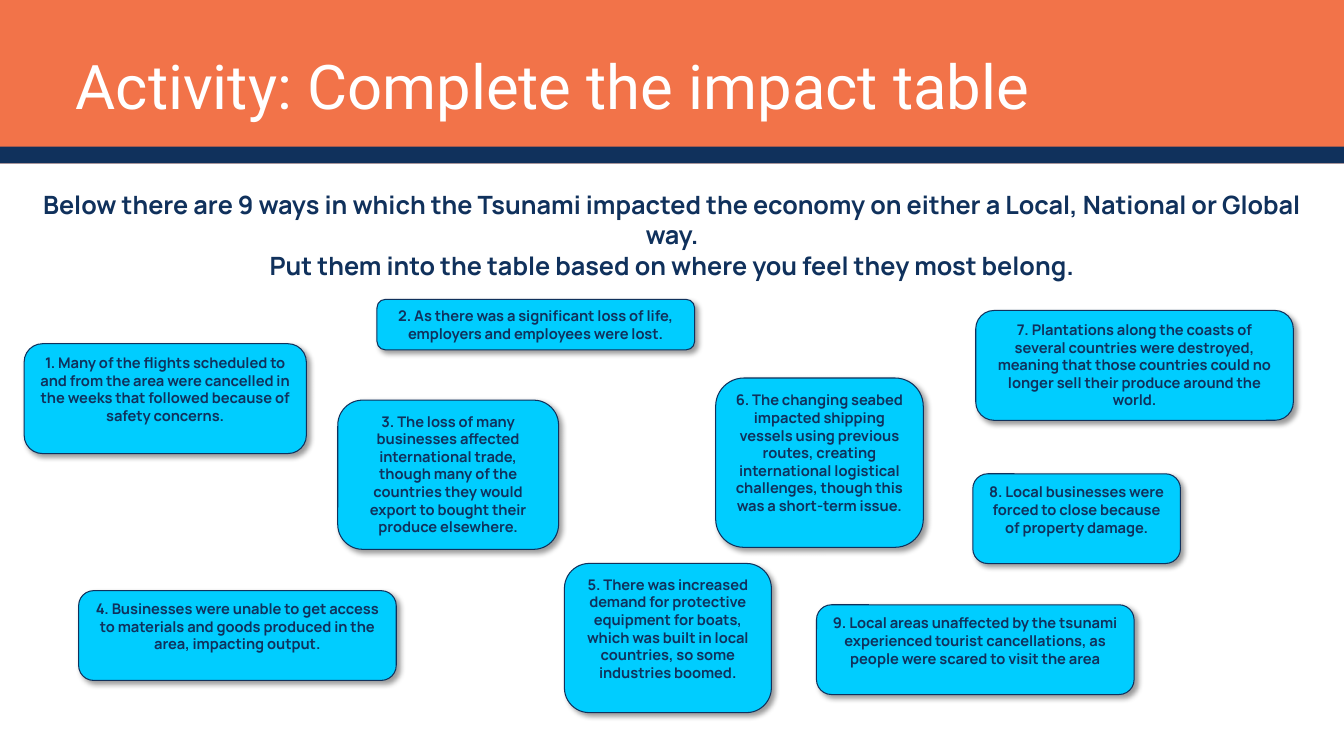
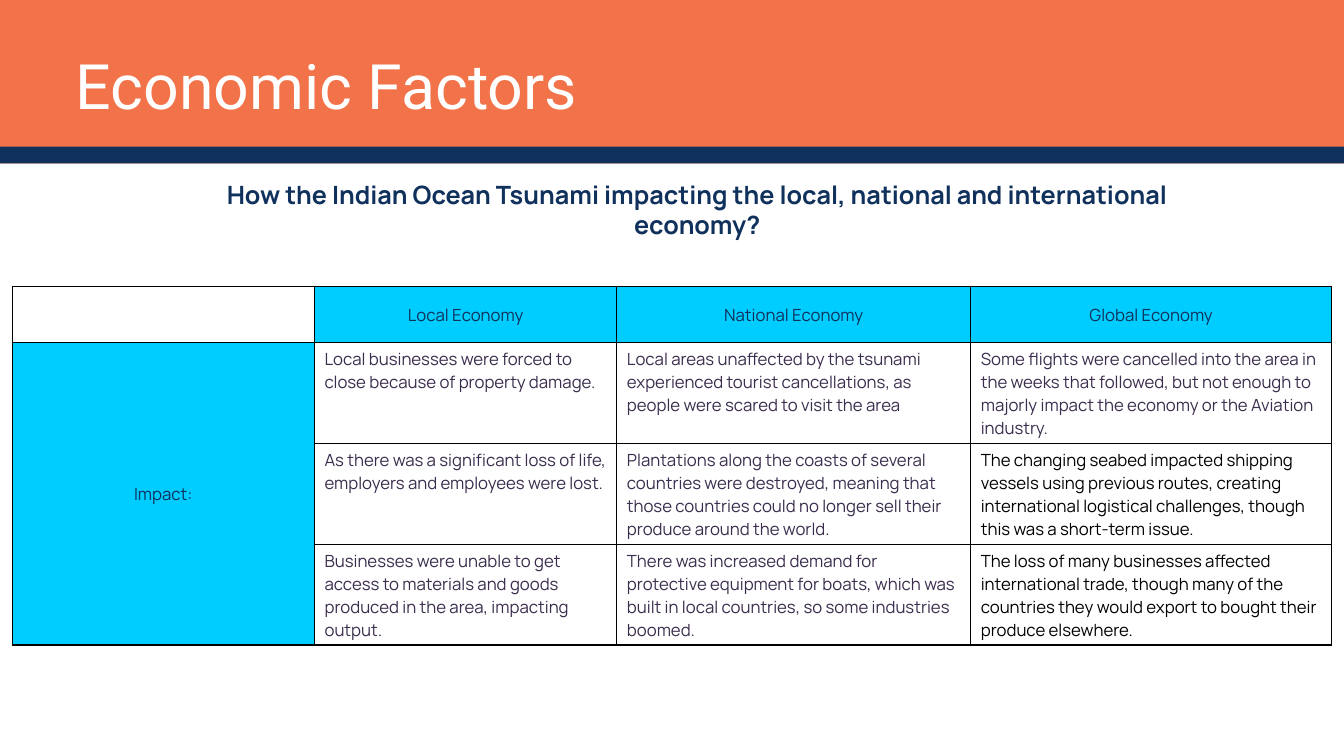
import lxml.etree
import pptx
import pptx.dml.color
import pptx.enum.shapes
import pptx.enum.text
import pptx.oxml.ns
import pptx.util

WIDTH = pptx.util.Inches(13.33)
HEIGHT = pptx.util.Inches(7.5)

ORANGE = "F27349"
NAVY = "10315C"
CYAN = "00CDFF"
PURPLE = "3B2D4D"
WHITE = "FFFFFF"
BLACK = "000000"

CENTER = pptx.enum.text.PP_ALIGN.CENTER
LEFT = pptx.enum.text.PP_ALIGN.LEFT
SHAPES = pptx.enum.shapes.MSO_SHAPE

TITLE = {"name": "Roboto", "size": pptx.util.Pt(44), "bold": False}
HEADING = {"name": "Manrope", "size": pptx.util.Pt(18), "bold": True}
CARD = {"name": "Manrope", "size": pptx.util.Pt(10.5), "bold": True}
CELL = {"name": "Manrope", "size": pptx.util.Pt(12), "bold": False}
NO_MARGINS = {f"margin_{side}": 0 for side in ("left", "top", "right", "bottom")}

FLIGHTS = (
    "Many of the flights scheduled to and from the area were cancelled "
    "in the weeks that followed because of safety concerns."
)
FEW_FLIGHTS = (
    "Some flights were cancelled into the area in the weeks that followed, "
    "but not enough to majorly impact the economy or the Aviation industry."
)
LOST_LIVES = (
    "As there was a significant loss of life, employers and employees were lost."
)
TRADE = (
    "The loss of many businesses affected international trade, though many of the "
    "countries they would export to bought their produce elsewhere."
)
MATERIALS = (
    "Businesses were unable to get access to materials and goods produced in the "
    "area, impacting output."
)
BOATS = (
    "There was increased demand for protective equipment for boats, which was built "
    "in local countries, so some industries boomed."
)
SEABED = (
    "The changing seabed impacted shipping vessels using previous routes, creating "
    "international logistical challenges, though this was a short-term issue."
)
PLANTATIONS = (
    "Plantations along the coasts of several countries were destroyed, meaning that "
    "those countries could no longer sell their produce around the world."
)
CLOSURES = "Local businesses were forced to close because of property damage."
TOURISTS = (
    "Local areas unaffected by the tsunami experienced tourist cancellations, as "
    "people were scared to visit the area"
)

CARDS = [
    (FLIGHTS, (1.8, 45.47, 21, 14.53)),
    (LOST_LIVES, (28.05, 39.6, 23.63, 6.67)),
    (TRADE, (25.13, 52.93, 16.43, 19.73)),
    (MATERIALS, (5.85, 78.13, 23.63, 11.87)),
    (BOATS, (42, 74.53, 15.4, 19.73)),
    (SEABED, (53.25, 50, 15.45, 22.4)),
    (PLANTATIONS, (72.6, 41.07, 23.63, 14.53)),
    (CLOSURES, (72.38, 62.67, 15.45, 11.87)),
    (TOURISTS, (60.75, 80, 23.63, 11.87)),
]

TABLE_COLUMNS = [22.5, 22.5, 26.33, 26.85]
TABLE_ROWS = [7.47, 13.33, 13.33, 13.33]
TABLE_TEXT = [
    ["", "Local Economy", "National Economy", "Global Economy"],
    ["Impact:", CLOSURES, TOURISTS, FEW_FLIGHTS],
    ["", LOST_LIVES, PLANTATIONS, SEABED],
    ["", MATERIALS, BOATS, TRADE],
]


def color(value):
    return pptx.dml.color.RGBColor.from_string(value)


def across(percent):
    return round(WIDTH * percent / 100)


def down(percent):
    return round(HEIGHT * percent / 100)


def place(box):
    left, top, width, height = box
    return across(left), down(top), across(width), down(height)


def apply_format(target, values):
    for name, value in values.items():
        setattr(target, name, value)


def write(frame, lines, font_format, font_color, paragraph_format):
    for index, line in enumerate(lines):
        paragraph = frame.add_paragraph() if index else frame.paragraphs[0]
        apply_format(paragraph, paragraph_format)
        run = paragraph.add_run()
        run.text = line
        apply_format(run.font, font_format)
        run.font.color.rgb = color(font_color)


def fit(frame):
    frame.word_wrap = True
    frame.auto_size = pptx.enum.text.MSO_AUTO_SIZE.SHAPE_TO_FIT_TEXT


def add_text(slide, box, lines, font_format, font_color, paragraph_format, margins):
    frame = slide.shapes.add_textbox(*place(box)).text_frame
    fit(frame)
    apply_format(frame, margins)
    write(frame, lines, font_format, font_color, paragraph_format)


def add_block(slide, kind, box, fill):
    shape = slide.shapes.add_shape(kind, *place(box))
    shape.fill.solid()
    shape.fill.fore_color.rgb = color(fill)
    shape.line.fill.background()
    shape.shadow.inherit = False
    return shape


def add_shadow(shape):
    qn = pptx.oxml.ns.qn
    effects = shape._element.spPr.find(qn("a:effectLst"))
    shadow = lxml.etree.SubElement(
        effects,
        qn("a:outerShdw"),
        blurRad=str(pptx.util.Pt(4)),
        dist=str(pptx.util.Pt(3)),
        dir=str(45 * 60000),
        algn="tl",
        rotWithShape="0",
    )
    tint = lxml.etree.SubElement(shadow, qn("a:srgbClr"), val=BLACK)
    lxml.etree.SubElement(tint, qn("a:alpha"), val="40000")


def add_card(slide, text, box):
    card = add_block(slide, SHAPES.ROUNDED_RECTANGLE, box, CYAN)
    card.line.color.rgb = color(NAVY)
    card.line.width = pptx.util.Pt(0.75)
    add_shadow(card)
    fit(card.text_frame)
    card.text_frame.vertical_anchor = pptx.enum.text.MSO_ANCHOR.TOP
    write(card.text_frame, [text], CARD, NAVY, {"alignment": CENTER})


def add_borders(cell):
    qn = pptx.oxml.ns.qn
    properties = cell._tc.get_or_add_tcPr()
    for side in ("a:lnL", "a:lnR", "a:lnT", "a:lnB"):
        line = lxml.etree.SubElement(properties, qn(side), w=str(pptx.util.Pt(1)))
        fill = lxml.etree.SubElement(line, qn("a:solidFill"))
        lxml.etree.SubElement(fill, qn("a:srgbClr"), val=BLACK)


def style_cell(cell, row, column, text):
    is_label = (row == 0) != (column == 0)
    add_borders(cell)
    if is_label:
        cell.fill.solid()
        cell.fill.fore_color.rgb = color(CYAN)
        cell.vertical_anchor = pptx.enum.text.MSO_ANCHOR.MIDDLE
        font_color = NAVY
    else:
        cell.fill.background()
        font_color = BLACK if column == 3 and row > 1 else PURPLE
    if text:
        alignment = CENTER if is_label else LEFT
        write(cell.text_frame, [text], CELL, font_color, {"alignment": alignment})


def add_impact_table(slide):
    box = (0.9, 37.87, sum(TABLE_COLUMNS), sum(TABLE_ROWS))
    table = slide.shapes.add_table(
        len(TABLE_ROWS), len(TABLE_COLUMNS), *place(box)
    ).table
    apply_format(table, {"first_row": False, "horz_banding": False})
    for column, width in zip(table.columns, TABLE_COLUMNS):
        column.width = across(width)
    for row, height in zip(table.rows, TABLE_ROWS):
        row.height = down(height)
    table.cell(1, 0).merge(table.cell(3, 0))
    for row, texts in enumerate(TABLE_TEXT):
        for column, text in enumerate(texts):
            style_cell(table.cell(row, column), row, column, text)


def add_slide(presentation, title, title_size, heading, heading_box):
    slide = presentation.slides.add_slide(presentation.slide_layouts[6])
    add_block(slide, SHAPES.RECTANGLE, (0, 0, 100, 21.6), ORANGE)
    add_block(slide, SHAPES.RECTANGLE, (0, 19.4, 100, 2.2), NAVY)
    add_text(
        slide,
        (5.63, 4.53, 88.75, 10.67),
        [title],
        TITLE | {"size": pptx.util.Pt(title_size)},
        WHITE,
        {"line_spacing": pptx.util.Pt(62.5)},
        NO_MARGINS,
    )
    add_text(slide, heading_box, heading, HEADING, NAVY, {"alignment": CENTER}, {})
    return slide


def main():
    presentation = pptx.Presentation()
    apply_format(presentation, {"slide_width": WIDTH, "slide_height": HEIGHT})

    activity = add_slide(
        presentation,
        "Activity: Complete the impact table",
        44,
        [
            "Below there are 9 ways in which the Tsunami impacted the economy "
            "on either a Local, National or Global way.",
            "Put them into the table based on where you feel they most belong.",
        ],
        (1.8, 24.4, 96.4, 13.47),
    )
    for number, (text, box) in enumerate(CARDS, start=1):
        add_card(activity, f"{number}. {text}", box)

    factors = add_slide(
        presentation,
        "Economic Factors",
        44.7,
        [
            "How the Indian Ocean Tsunami impacting the local, national "
            "and international economy?"
        ],
        (13.95, 23.07, 75.84, 13.47),
    )
    add_impact_table(factors)

    presentation.save("out.pptx")


if __name__ == "__main__":
    main()
